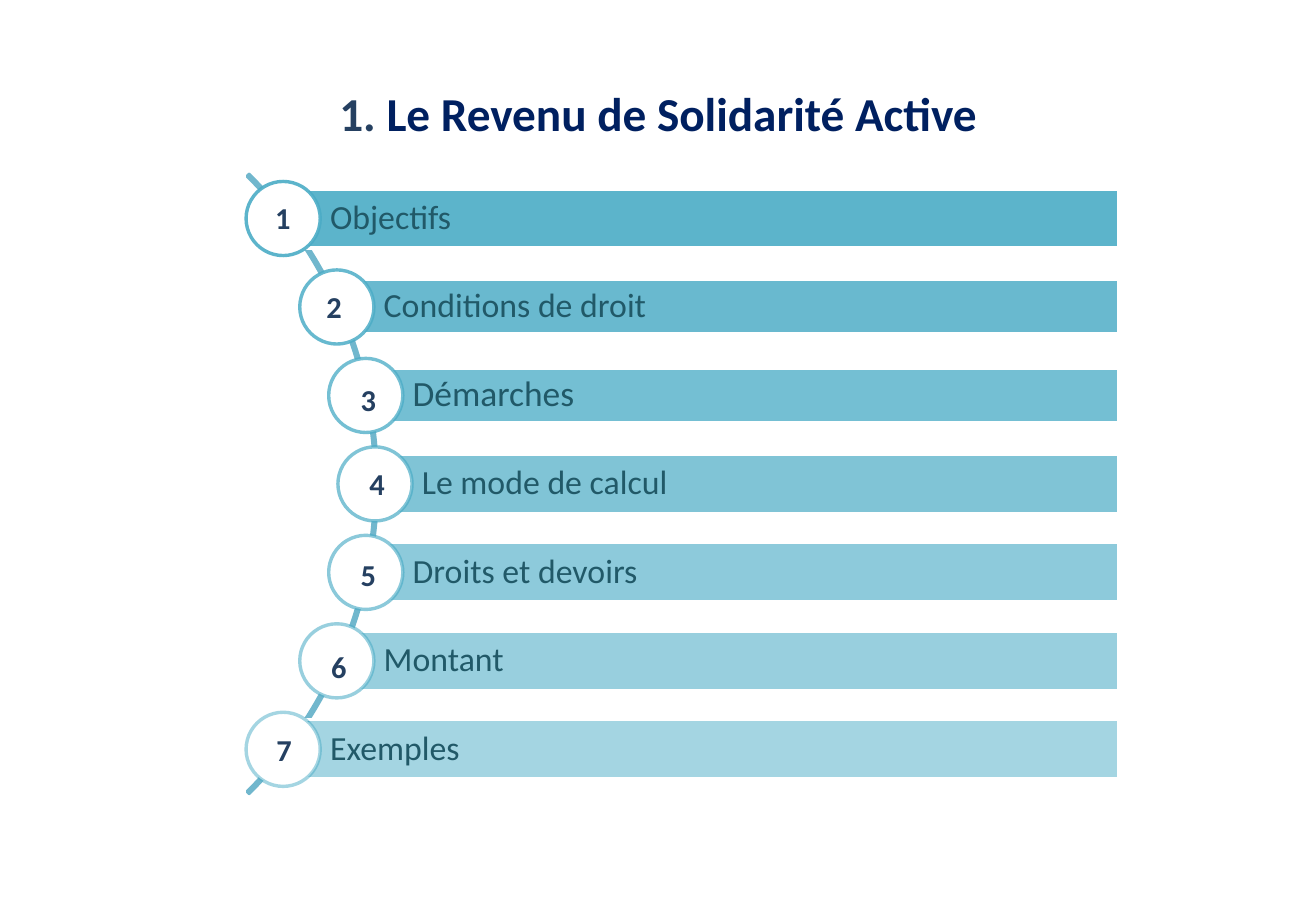
from dataclasses import dataclass
from math import sqrt

from lxml import etree
from pptx import Presentation
from pptx import util as u
from pptx.dml.color import RGBColor
from pptx.enum import shapes, text
from pptx.oxml.ns import qn


@dataclass(frozen=True)
class Theme:
    font: str = "Calibri"
    white: str = "FFFFFF"
    accent: str = "4BACC6"
    arc: str = "71B7CD"
    topic: str = "215968"
    number: str = "254061"
    title: str = "002060"
    title_size: int = 28
    number_size: int = 18
    topic_size: int = 20
    large_topic_size: int = 21
    line_width: int = 2


THEME = Theme()
BAR, LOW_BAR = 1.24, 1.14
TOPICS = [
    ("Objectifs", THEME.topic_size, BAR, (0.01, -0.01)),
    ("Conditions de droit", THEME.topic_size, LOW_BAR, (-0.04, -0.01)),
    ("Démarches", THEME.large_topic_size, LOW_BAR, (0.07, 0.09)),
    ("Le mode de calcul", THEME.topic_size, BAR, (0.06, 0)),
    ("Droits et devoirs", THEME.topic_size, BAR, (0.07, 0.04)),
    ("Montant", THEME.topic_size, BAR, (0.06, 0.11)),
    ("Exemples", THEME.topic_size, BAR, (0.04, 0.01)),
]


def apply_format(target, values):
    for name, value in values.items():
        setattr(target, name, value)


def add_run(paragraph, wording, color, size, bold=False):
    run = paragraph.add_run()
    run.text = wording
    apply_format(run.font, {"name": THEME.font, "size": u.Pt(size), "bold": bold})
    run.font.color.rgb = RGBColor.from_string(color)


def set_alpha(color_format_parent, percent):
    color = color_format_parent.find(".//" + qn("a:srgbClr"))
    etree.SubElement(color, qn("a:alpha"), val=str(round(percent * 1000)))


def add_outlined(slide, kind, box, line, fill=None):
    shape = slide.shapes.add_shape(kind, *map(u.Cm, box))
    shape.shadow.inherit = False
    if fill:
        shape.fill.solid()
        shape.fill.fore_color.rgb = RGBColor.from_string(fill)
    else:
        shape.fill.background()
    shape.line.color.rgb = RGBColor.from_string(line)
    shape.line.width = u.Pt(THEME.line_width)
    return shape


def add_title(slide, box):
    title = slide.shapes.title
    names = ("left", "top", "width", "height")
    apply_format(title, dict(zip(names, map(u.Cm, box))))
    title.text_frame.vertical_anchor = text.MSO_ANCHOR.MIDDLE
    paragraph = title.text_frame.paragraphs[0]
    paragraph.alignment = text.PP_ALIGN.CENTER
    add_run(paragraph, "1. ", THEME.number, THEME.title_size, True)
    add_run(paragraph, "Le Revenu de Solidarité Active", THEME.title, THEME.title_size, True)


def add_bar(slide, box, wording, size, opacity):
    bar = add_outlined(slide, shapes.MSO_SHAPE.RECTANGLE, box, THEME.white, THEME.accent)
    set_alpha(bar.fill._xPr.find(qn("a:solidFill")), opacity)
    frame = bar.text_frame
    apply_format(frame, {
        "margin_left": u.Cm(0.98), "margin_right": u.Cm(0.15),
        "margin_top": u.Cm(0.15), "margin_bottom": u.Cm(0.15),
        "word_wrap": True, "vertical_anchor": text.MSO_ANCHOR.MIDDLE,
    })
    paragraph = frame.paragraphs[0]
    apply_format(paragraph, {"alignment": text.PP_ALIGN.LEFT, "line_spacing": 0.9})
    add_run(paragraph, wording, THEME.topic, size)


def add_badge(slide, center_x, center_y, number, shift, opacity):
    diameter, label_width, label_height = 1.55, 0.86, 1.02
    box = (center_x - diameter / 2, center_y - diameter / 2, diameter, diameter)
    badge = add_outlined(slide, shapes.MSO_SHAPE.OVAL, box, THEME.accent, THEME.white)
    set_alpha(badge.line._ln, opacity)
    label = slide.shapes.add_textbox(
        u.Cm(center_x + shift[0] - label_width / 2),
        u.Cm(center_y + shift[1] - label_height / 2),
        u.Cm(label_width), u.Cm(label_height))
    label.text_frame.word_wrap = True
    add_run(label.text_frame.paragraphs[0], str(number), THEME.number, THEME.number_size, True)


def add_curved_list(slide, box):
    left, top, width, height = box
    middle = top + height / 2
    arc_size, pitch, radius = 18.31, 1.85, 8.98
    arc_box = (left - 15.55, middle - arc_size / 2, arc_size, arc_size)
    arc = add_outlined(slide, shapes.MSO_SHAPE.BLOCK_ARC, arc_box, THEME.arc)
    for index, value in enumerate((189, 27, 0.003)):
        arc.adjustments[index] = value

    last = len(TOPICS) - 1
    for index, (wording, size, bar_height, shift) in enumerate(TOPICS):
        offset = (index - last / 2) * pitch
        center_x = left - 6.27 + sqrt(radius ** 2 - offset ** 2)
        center_y = middle + offset
        opacity = 90 - 40 * index / last
        bar_box = (center_x, center_y - bar_height / 2, left + width - center_x, bar_height)
        add_bar(slide, bar_box, wording, size, opacity)
        add_badge(slide, center_x, center_y, index + 1, shift, opacity)


def main():
    presentation = Presentation()
    presentation.slide_width = u.Cm(27.51)
    presentation.slide_height = u.Cm(19.05)
    slide = presentation.slides.add_slide(presentation.slide_layouts[5])
    add_title(slide, (1.37, 0.76, 24.77, 3.18))
    add_curved_list(slide, (5.13, 3.78, 18.26, 12.68))
    presentation.save("out.pptx")


if __name__ == "__main__":
    main()
